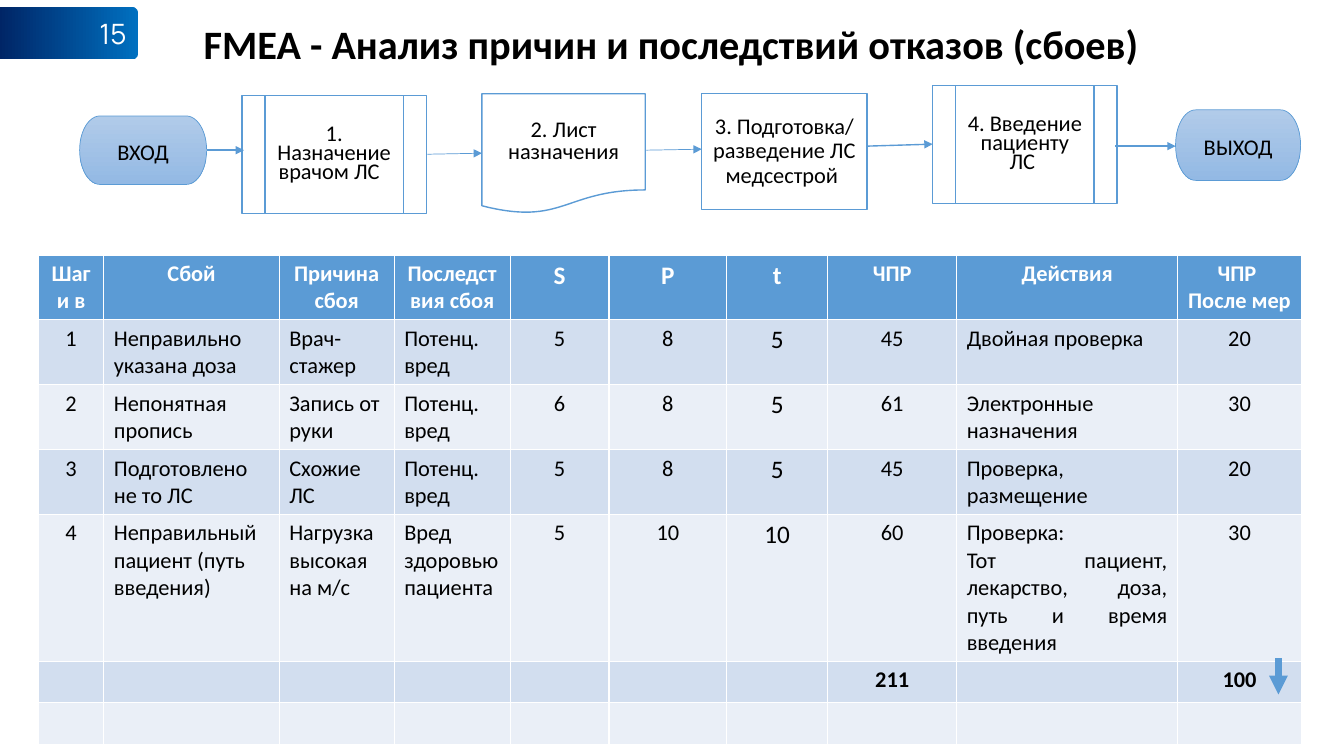
import pptx
import pptx.util
import pptx.dml.color
import pptx.enum.shapes
import pptx.enum.text
import pptx.oxml.ns
from lxml import etree

Inches = pptx.util.Inches
Pt = pptx.util.Pt
SHAPE = pptx.enum.shapes.MSO_SHAPE
ANCHOR = pptx.enum.text.MSO_ANCHOR
ALIGN = pptx.enum.text.PP_ALIGN
qn = pptx.oxml.ns.qn
BLUE = "5B9BD5"


def color(value):
    return pptx.dml.color.RGBColor.from_string(value)


def write(frame, text, size, align, bold=False, ink="000000", font="Calibri"):
    for i, line in enumerate(text.split("\n")):
        paragraph = frame.add_paragraph() if i else frame.paragraphs[0]
        paragraph.alignment = align
        run = paragraph.add_run()
        run.text = line
        run.font.name = font
        run.font.size = Pt(size)
        run.font.bold = bold
        run.font.color.rgb = color(ink)


deck = pptx.Presentation()
deck.slide_width = Inches(13.33)
deck.slide_height = Inches(7.5)
slide = deck.slides.add_slide(deck.slide_layouts[0])
subtitle = slide.placeholders[1].element
subtitle.getparent().remove(subtitle)

# Page number badge
badge = slide.shapes.add_shape(SHAPE.ROUNDED_RECTANGLE, Inches(-0.1), Inches(0.07),
                               Inches(1.47), Inches(0.52))
badge.adjustments[0] = 0.108
badge.shadow.inherit = False
badge.line.fill.background()
badge.fill.gradient()
badge.fill.gradient_angle = 180
for stop, shade in zip(badge.fill.gradient_stops, ("0070C0", "002060")):
    stop.color.rgb = color(shade)
badge.text_frame.vertical_anchor = ANCHOR.MIDDLE
write(badge.text_frame, "15", 20, ALIGN.RIGHT, ink="FFFFFF", font="Manrope")

# Title
title = slide.shapes.title
title.left, title.top = Inches(1.66), Inches(0.15)
title.width, title.height = Inches(10), Inches(0.58)
title.text_frame.vertical_anchor = ANCHOR.BOTTOM
write(title.text_frame, "FMEA - Анализ причин и последствий отказов (сбоев)", 28.8,
      ALIGN.CENTER, bold=True)
title.text_frame.paragraphs[0].line_spacing = 0.9

# Failure table
widths = [0.65, 1.74, 1.14, 1.15, 0.98, 1.17, 1, 1.28, 2.19, 1.23]
heights = [0.64, 0.64, 0.64, 0.64, 1.44, 0.41, 0.41]
rows = [
    ["Шаги в", "Сбой", "Причина сбоя", "Последствия сбоя", "S", "P", "t", "ЧПР",
     "Действия", "ЧПР \nПосле мер"],
    ["1", "Неправильно указана доза", "Врач-стажер", "Потенц. вред", "5", "8", "5", "45",
     "Двойная проверка", "20"],
    ["2", "Непонятная пропись", "Запись от руки", "Потенц. вред", "6", "8", "5", "61",
     "Электронные\nназначения", "30"],
    ["3", "Подготовлено не то ЛС", "Схожие ЛС", "Потенц. вред", "5", "8", "5", "45",
     "Проверка, размещение", "20"],
    ["4", "Неправильный пациент (путь введения)", "Нагрузка высокая на м/с",
     "Вред здоровью пациента", "5", "10", "10", "60",
     "Проверка:\nТот пациент, лекарство, доза, путь и время введения", "30"],
    [""] * 7 + ["211", "", "100"],
    [""] * 10,
]
failures = slide.shapes.add_table(len(rows), len(widths), Inches(0.38), Inches(2.53),
                                  Inches(sum(widths)), Inches(sum(heights))).table
for column, width in zip(failures.columns, widths):
    column.width = Inches(width)
for r, (row, height) in enumerate(zip(rows, heights)):
    failures.rows[r].height = Inches(height)
    header = r == 0
    for c, text in enumerate(row):
        cell = failures.cell(r, c)
        cell.fill.solid()
        cell.fill.fore_color.rgb = color(BLUE if header else ("EAEFF7", "D2DEEF")[r % 2])
        if not text:
            continue
        align = ALIGN.CENTER
        if not header and c in (1, 2, 3):
            align = ALIGN.LEFT
        elif not header and c == 8:
            align = ALIGN.JUSTIFY
        large = c == 6 or (header and c in (4, 5))
        write(cell.text_frame, text, 18 if large else 16, align,
              bold=header or r == 5, ink="FFFFFF" if header else "000000")

# Process steps: shape, box, text, line spacing
process = slide.shapes.add_group_shape().shapes
steps = [
    (SHAPE.FLOWCHART_TERMINATOR, (0.79, 1.15, 1.26, 0.68), "ВХОД", 1.07),
    (SHAPE.FLOWCHART_PREDEFINED_PROCESS, (2.4, 0.95, 1.83, 1.17),
     "1. Назначение врачом ЛС  ", 0.7),
    (SHAPE.FLOWCHART_DOCUMENT, (4.78, 0.93, 1.62, 1.19), "2. Лист назначения", 0.8),
    (SHAPE.RECTANGLE, (6.96, 0.93, 1.64, 1.15), "3. Подготовка/ разведение ЛС медсестрой ", 0.9),
    (SHAPE.FLOWCHART_PREDEFINED_PROCESS, (9.25, 0.85, 1.83, 1.17),
     "4. Введение пациенту ЛС ", 0.7),
    (SHAPE.FLOWCHART_TERMINATOR, (11.66, 1.09, 1.24, 0.7), "ВЫХОД", 1.07),
]
for kind, box, text, spacing in steps:
    step = process.add_shape(kind, *map(Inches, box))
    step.shadow.inherit = False
    step.line.color.rgb = color(BLUE)
    step.line.width = Pt(1)
    step.text_frame.word_wrap = True
    step.text_frame.vertical_anchor = ANCHOR.MIDDLE
    write(step.text_frame, text, 16, ALIGN.CENTER)
    paragraph = step.text_frame.paragraphs[0]
    paragraph.line_spacing = spacing
    if kind == SHAPE.FLOWCHART_TERMINATOR:
        step.line.width = Pt(0.5)
        paragraph.space_after = Pt(8)
        step.fill.gradient()
        step.fill.gradient_angle = 270
        for stop, shade in zip(step.fill.gradient_stops, ("B1CBE9", "93B9E4")):
            stop.color.rgb = color(shade)
    else:
        step.fill.solid()
        step.fill.fore_color.rgb = color("FFFFFF")

# Arrows between steps, then the arrow for the falling total
arrows = [
    (process, (2.05, 1.49, 2.42, 1.49), 1),
    (process, (4.24, 1.53, 4.78, 1.52), 0.5),
    (process, (6.41, 1.49, 6.96, 1.48), 0.5),
    (process, (8.59, 1.45, 9.25, 1.43), 1),
    (process, (11.06, 1.45, 11.66, 1.45), 1),
    (slide.shapes, (12.68, 6.53, 12.68, 6.89), 4.5),
]
for parent, ends, weight in arrows:
    arrow = parent.add_connector(pptx.enum.shapes.MSO_CONNECTOR.STRAIGHT, *map(Inches, ends))
    arrow.line.color.rgb = color(BLUE)
    arrow.line.width = Pt(weight)
    etree.SubElement(arrow.line._get_or_add_ln(), qn("a:tailEnd"), type="triangle")
    etree.SubElement(arrow.element.spPr, qn("a:effectLst"))

deck.save("out.pptx")
